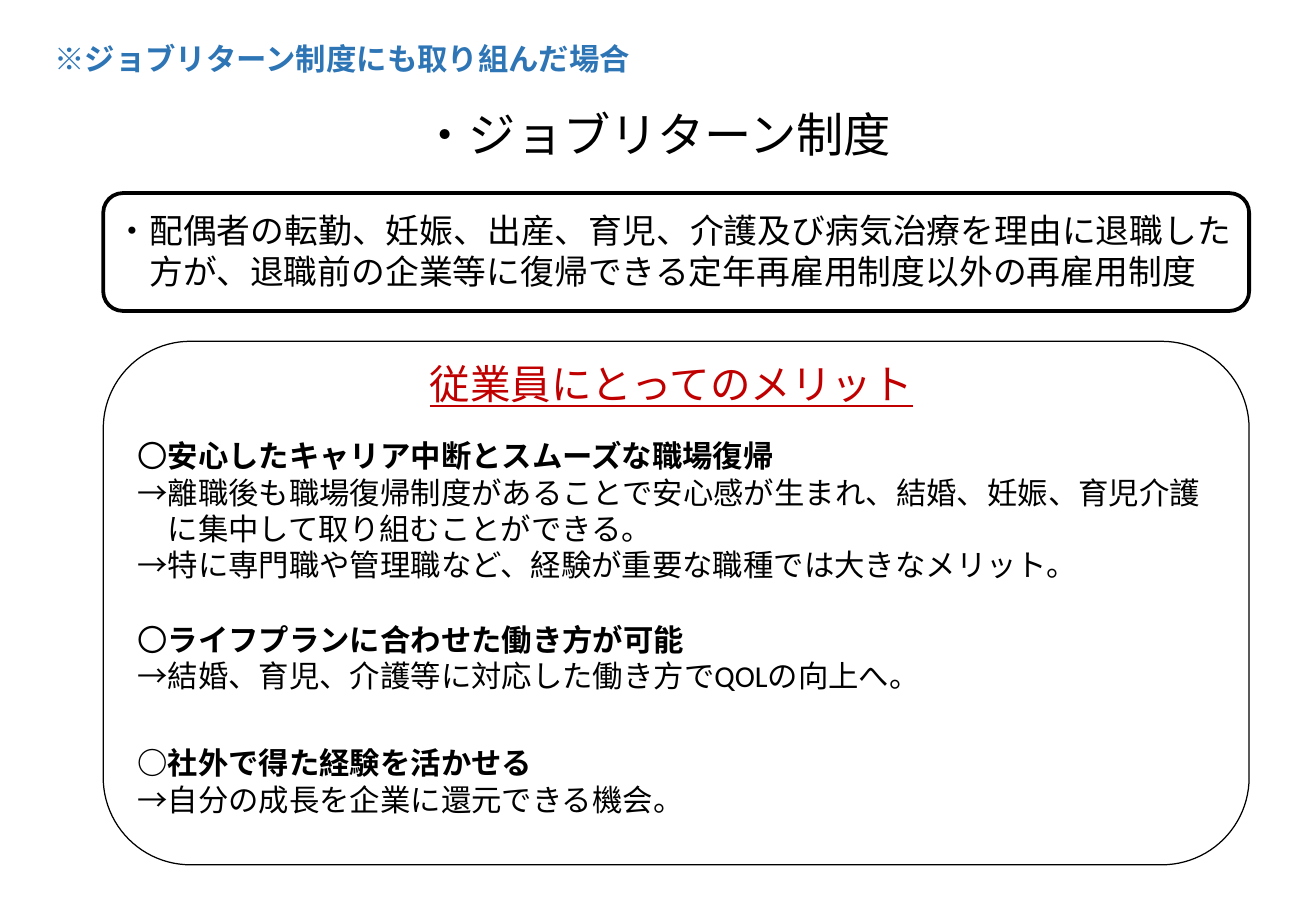
from pptx import Presentation
from pptx.dml.color import RGBColor
from pptx.enum.shapes import MSO_SHAPE
from pptx.enum.text import MSO_ANCHOR, MSO_AUTO_SIZE, PP_ALIGN
from pptx.util import Emu, Pt
from lxml.etree import SubElement
from pptx.oxml.ns import qn

EMU_PER_PX = 9144  # 100 px to the inch
BLACK = RGBColor(0x00, 0x00, 0x00)
RED = RGBColor(0xC0, 0x00, 0x00)
BLUE = RGBColor(0x2E, 0x75, 0xB6)
FONT = "Calibri"
COMPARISON_LAYOUT = 4

DEFINITION = [
    "・配偶者の転勤、妊娠、出産、育児、介護及び病気治療を理由に退職した",
    "　方が、退職前の企業等に復帰できる定年再雇用制度以外の再雇用制度",
]

# Placeholder index, area, wrap, circle (plain), heading (bold), details
MERITS = [
    (2, (103, 355, 895, 131), True, "〇", "安心したキャリア中断とスムーズな職場復帰", [
        "→離職後も職場復帰制度があることで安心感が生まれ、結婚、妊娠、育児介護",
        "　に集中して取り組むことができる。",
        "→特に専門職や管理職など、経験が重要な職種では大きなメリット。"]),
    (3, (103, 506, 668, 71), False, "〇", "ライフプランに合わせた働き方が可能", [
        "→結婚、育児、介護等に対応した働き方でQOLの向上へ。"]),
    (4, (103, 608, 472, 71), False, "", "○社外で得た経験を活かせる", [
        "→自分の成長を企業に還元できる機会。"]),
]


def px(length):
    return Emu(length * EMU_PER_PX)


def place(box, area):
    box.left, box.top, box.width, box.height = map(px, area)


def format_span(span, size, color=BLACK, bold=False, underline=False):
    font = span.font
    font.name, font.size, font.bold = FONT, Pt(size), bold
    font.underline = underline
    font.color.rgb = color


def format_frame(frame, wrap=True):
    frame.word_wrap = wrap
    frame.auto_size = MSO_AUTO_SIZE.NONE
    frame.vertical_anchor = MSO_ANCHOR.TOP


def format_para(para):
    """Left-align without a bullet, an indent or space between lines."""
    para.alignment = PP_ALIGN.LEFT
    para.space_before = para.space_after = Pt(0)
    para.line_spacing = 1.0
    properties = para._p.get_or_add_pPr()
    properties.set("marL", "0")
    properties.set("indent", "0")
    SubElement(properties, qn("a:buNone"))


def fill_box(box, area, lines, size, wrap=True, **style):
    place(box, area)
    frame = box.text_frame
    format_frame(frame, wrap)
    frame.text = "\n".join(lines)
    for para in frame.paragraphs:
        format_para(para)
        for span in para.runs:
            format_span(span, size, **style)


def add_label(page, area, text, size, **style):
    box = page.shapes.add_textbox(*map(px, area))
    fill_box(box, area, [text], size, **style)


def fill_merit(box, area, wrap, circle, heading, details):
    fill_box(box, area, [circle, *details], 18, wrap)
    span = box.text_frame.paragraphs[0].add_run()
    span.text = heading
    format_span(span, 18, bold=True)


def add_frame(page, area, weight):
    frame = page.shapes.add_shape(MSO_SHAPE.ROUNDED_RECTANGLE, *map(px, area))
    frame.shadow.inherit = False
    frame.fill.background()
    frame.line.color.rgb = BLACK
    frame.line.width = Pt(weight)


def main():
    deck = Presentation()
    deck.slide_width, deck.slide_height = px(1083), px(750)
    page = deck.slides.add_slide(deck.slide_layouts[COMPARISON_LAYOUT])
    bodies = {box.placeholder_format.idx: box for box in page.placeholders}

    # Note and title
    add_label(page, (35, 28, 506, 40), "※ジョブリターン制度にも取り組んだ場合", 18,
              color=BLUE, bold=True)
    fill_box(page.shapes.title, (337, 82, 410, 57), ["・ジョブリターン制度"], 28)

    # Definition
    add_frame(page, (85, 159, 943, 97), 2.25)
    fill_box(bodies[1], (85, 168, 943, 77), DEFINITION, 20)

    # Merits for employees
    add_frame(page, (85, 281, 943, 431), 0.75)
    add_label(page, (344, 291, 424, 50), "従業員にとってのメリット", 24,
              wrap=False, color=RED, underline=True)
    for index, *merit in MERITS:
        fill_merit(bodies[index], *merit)

    # Unused placeholders
    for box in list(page.placeholders):
        if not box.text_frame.text:
            box.element.getparent().remove(box.element)

    deck.save("out.pptx")


if __name__ == "__main__":
    main()
